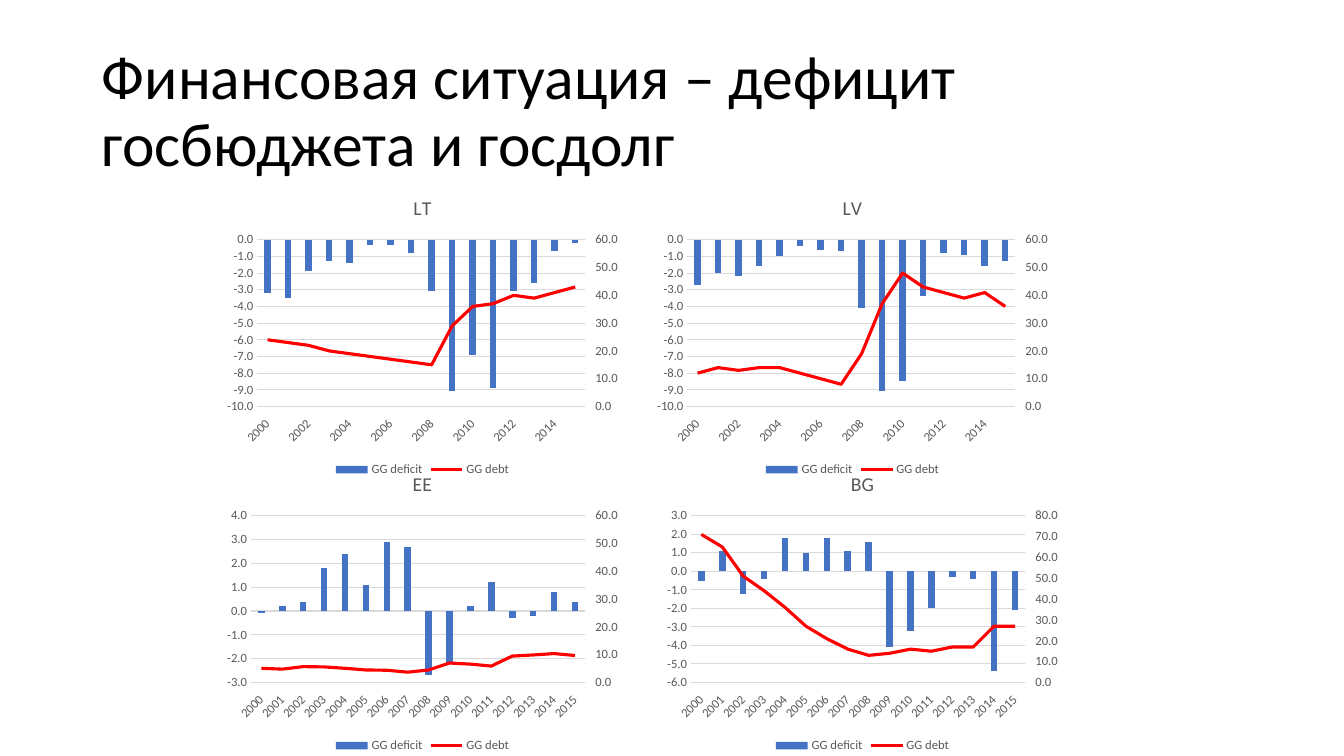
from copy import deepcopy

from pptx import Presentation
from pptx.chart.axis import CategoryAxis, ValueAxis
from pptx.chart.data import CategoryChartData
from pptx.dml.color import RGBColor
from pptx.enum.chart import (XL_CHART_TYPE, XL_LEGEND_POSITION, XL_MARKER_STYLE,
                             XL_TICK_LABEL_POSITION, XL_TICK_MARK)
from pptx.enum.text import MSO_ANCHOR
from pptx.oxml import parse_xml
from pptx.oxml.ns import nsdecls, qn
from pptx.util import Emu, Pt

COLUMNS = XL_CHART_TYPE.COLUMN_CLUSTERED
BOTTOM = XL_LEGEND_POSITION.BOTTOM
NO_MARKER = XL_MARKER_STYLE.NONE
LOW = XL_TICK_LABEL_POSITION.LOW
NO_TICK, TICK_OUT = XL_TICK_MARK.NONE, XL_TICK_MARK.OUTSIDE
MIDDLE = MSO_ANCHOR.MIDDLE

EMU_PER_PX = 914400 / 100.8
FONT = "Calibri"
BLACK, GREY, PALE, BLUE, RED = "000000", "595959", "D9D9D9", "4472C4", "FF0000"
CHART_W, CHART_H = 407, 302
YEARS = [str(year) for year in range(2000, 2016)]

# Country, left, top, right axis maximum, deficit, debt
COUNTRIES = [
    ("LT", 219, 179, 60,
     [-3.2, -3.5, -1.9, -1.3, -1.4, -0.3, -0.3, -0.8,
      -3.1, -9.1, -6.9, -8.9, -3.1, -2.6, -0.7, -0.2],
     [24, 23, 22, 20, 19, 18, 17, 16, 15, 29, 36, 37, 40, 39, 41, 43]),
    ("LV", 649, 179, 60,
     [-2.7, -2, -2.2, -1.6, -1, -0.4, -0.6, -0.7,
      -4.1, -9.1, -8.5, -3.4, -0.8, -0.9, -1.6, -1.3],
     [12, 14, 13, 14, 14, 12, 10, 8, 19, 37, 48, 43, 41, 39, 41, 36]),
    ("EE", 219, 455, 60,
     [-0.1, 0.2, 0.4, 1.8, 2.4, 1.1, 2.9, 2.7,
      -2.7, -2.2, 0.2, 1.2, -0.3, -0.2, 0.8, 0.4],
     [5.1, 4.8, 5.7, 5.6, 5.1, 4.5, 4.4, 3.7,
      4.5, 7, 6.6, 5.9, 9.5, 9.9, 10.4, 9.7]),
    ("BG", 659, 455, None,
     [-0.5, 1.1, -1.2, -0.4, 1.8, 1, 1.8, 1.1,
      1.6, -4.1, -3.2, -2, -0.3, -0.4, -5.4, -2.1],
     [71, 65, 51, 44, 36, 27, 21, 16, 13, 14, 16, 15, 17, 17, 27, 27]),
]


def px(n):
    return Emu(round(n * EMU_PER_PX))


def rgb(value):
    return RGBColor.from_string(value)


def set_font(font, size, color):
    font.name, font.size, font.bold = FONT, Pt(size), False
    font.color.rgb = rgb(color)


def set_line(line, color, width):
    line.color.rgb = rgb(color)
    line.width = Pt(width)


def add_run(tf, text, size, color, spacing=None):
    p = tf.paragraphs[0]
    p.line_spacing = spacing
    r = p.add_run()
    r.text = text
    set_font(r.font, size, color)


def add_title(slide, text, left, top, width, height):
    sp = slide.shapes.add_textbox(px(left), px(top), px(width), px(height))
    tf = sp.text_frame
    tf.word_wrap = True
    tf.vertical_anchor = MIDDLE
    add_run(tf, text, size=44, color=BLACK, spacing=0.9)


def style_axes(chart):
    cat, val = chart.category_axis, chart.value_axis
    for axis, number_format in ((cat, "General"), (val, "#,##0.0")):
        axis.major_tick_mark = axis.minor_tick_mark = NO_TICK
        labels = axis.tick_labels
        set_font(labels.font, 9, GREY)
        labels.number_format = number_format
        labels.number_format_is_linked = False
    cat.tick_label_position = LOW
    set_line(cat.format.line, PALE, 0.75)
    val.format.line.fill.background()
    set_line(val.major_gridlines.format.line, PALE, 0.75)
    # Let the year labels rotate automatically
    body = cat._element.find(qn("c:txPr")).find(qn("a:bodyPr"))
    body.set("rot", "-60000000")
    body.set("vert", "horz")


def move_debt_to_right_axis(chart, right_max):
    bars = chart.plots[0]._element
    cat, val = chart.category_axis._element, chart.value_axis._element

    # Debt series becomes a line
    ser = bars.findall(qn("c:ser"))[1]
    for flag in ser.findall(qn("c:invertIfNegative")):
        ser.remove(flag)
    line = parse_xml(
        f'<c:lineChart {nsdecls("c")}><c:grouping val="standard"/>'
        '<c:varyColors val="0"/><c:marker val="1"/>'
        '<c:axId val="5001"/><c:axId val="5002"/></c:lineChart>')
    line.insert(2, ser)
    bars.addnext(line)
    debt = chart.plots[1].series[0]
    debt.marker.style = NO_MARKER
    debt.smooth = False

    # Second pair of axes
    right, hidden = deepcopy(val), deepcopy(cat)
    val.addnext(right)
    right.addnext(hidden)
    for axis, own, other in ((hidden, "5001", "5002"), (right, "5002", "5001")):
        axis.find(qn("c:axId")).set("val", own)
        axis.find(qn("c:crossAx")).set("val", other)
    CategoryAxis(hidden).visible = False
    right.find(qn("c:axPos")).set("val", "r")
    right.find(qn("c:crosses")).set("val", "max")
    right_axis = ValueAxis(right)
    right_axis.has_major_gridlines = False
    right_axis.major_tick_mark = TICK_OUT
    right_axis.maximum_scale = right_max


def add_country_chart(slide, country, left, top, right_max, deficit, debt):
    data = CategoryChartData()
    data.categories = YEARS
    data.add_series("GG deficit", deficit)
    data.add_series("GG debt", debt)
    chart = slide.shapes.add_chart(
        COLUMNS, px(left), px(top), px(CHART_W), px(CHART_H), data).chart
    set_font(chart.font, 10, BLACK)

    # Title and legend
    chart.has_title = True
    add_run(chart.chart_title.text_frame, country, size=14, color=GREY)
    chart.chart_title.include_in_layout = False
    chart.has_legend = True
    chart.legend.position = BOTTOM
    chart.legend.include_in_layout = False
    set_font(chart.legend.font, 9, GREY)

    # Series and axes
    plot = chart.plots[0]
    plot.gap_width, plot.overlap = 219, -27
    plot.vary_by_categories = False
    bars, line = plot.series
    bars.format.fill.solid()
    bars.format.fill.fore_color.rgb = rgb(BLUE)
    bars.invert_if_negative = False
    set_line(line.format.line, RED, 2.25)
    style_axes(chart)
    move_debt_to_right_axis(chart, right_max)


def main():
    prs = Presentation()
    prs.slide_width, prs.slide_height = px(1344), px(756)
    slide = prs.slides.add_slide(prs.slide_layouts[6])
    add_title(slide, "Финансовая ситуация – дефицит госбюджета и госдолг",
              92, 40, 1159, 146)
    for country in COUNTRIES:
        add_country_chart(slide, *country)
    prs.save("out.pptx")


if __name__ == "__main__":
    main()
